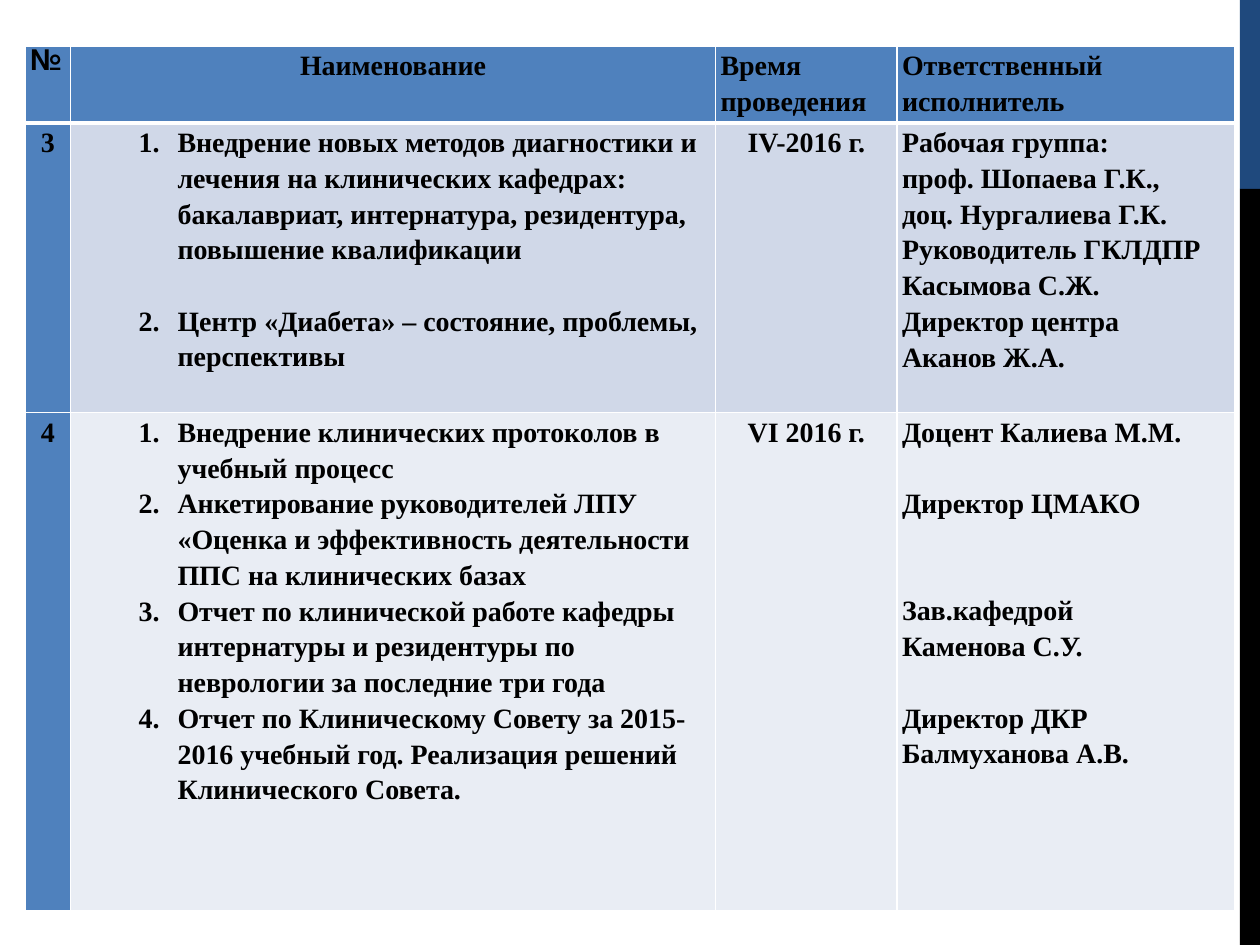
from lxml import etree
from pptx import Presentation
from pptx import util as u
from pptx.dml.color import RGBColor
from pptx.enum import shapes, text
from pptx.oxml import ns

BLACK = RGBColor(0, 0, 0)
NAVY = RGBColor(0x1F, 0x49, 0x7D)
BLUE = RGBColor(0x4F, 0x81, 0xBD)
BAND = RGBColor(0xD0, 0xD8, 0xE8)
PALE = RGBColor(0xE9, 0xED, 0xF4)
WHITE = RGBColor(0xFF, 0xFF, 0xFF)
SERIF, SANS = "Times New Roman", "TeX Gyre Adventor"
MID = text.PP_ALIGN.CENTER
LINE = 20.4

HEAD = ["№", "Наименование", "Время проведения", "Ответственный исполнитель"]
PLANS = [
    ("3",
     ["Внедрение новых методов диагностики и лечения на клинических кафедрах: "
      "бакалавриат, интернатура, резидентура, повышение квалификации",
      ("Центр «Диабета» – состояние, проблемы, перспективы", 1)],
     "IV-2016 г.",
     ["Рабочая группа:", "проф. Шопаева Г.К.,", "доц. Нургалиева Г.К.",
      "Руководитель ГКЛДПР Касымова С.Ж.", "Директор центра", "Аканов Ж.А."]),
    ("4",
     ["Внедрение клинических протоколов в учебный процесс",
      "Анкетирование руководителей ЛПУ «Оценка и эффективность деятельности "
      "ППС на клинических базах",
      "Отчет по клинической работе кафедры интернатуры и резидентуры по "
      "неврологии за последние три года",
      "Отчет по Клиническому Совету за 2015-2016 учебный год. Реализация "
      "решений Клинического Совета."],
     "VI 2016 г.",
     ["Доцент Калиева М.М.", ("Директор ЦМАКО", 1), ("Зав.кафедрой", 2),
      "Каменова С.У.", ("Директор ДКР Балмуханова А.В.", 1)]),
]


def write(frame, lines, font=SERIF, size=16, align=None, listed=False):
    """Fill a frame with paragraphs; a pair gives the text and the lines of space above it."""
    lines = [lines] if isinstance(lines, str) else lines
    for i, line in enumerate(lines):
        words, gap = (line, 0) if isinstance(line, str) else line
        para = frame.paragraphs[0] if i == 0 else frame.add_paragraph()
        para.alignment, para.line_spacing = align, 1.15
        para.space_before = u.Pt(gap * LINE)
        run = para.add_run()
        run.text = words
        run.font.name, run.font.size, run.font.bold = font, u.Pt(size), True
        run.font.color.rgb = BLACK
        if listed:
            props = para._p.get_or_add_pPr()
            props.set("marL", str(u.Inches(0.81)))
            props.set("indent", str(u.Inches(-0.31)))
            etree.SubElement(props, ns.qn("a:buFont"), typeface="+mj-lt")
            etree.SubElement(props, ns.qn("a:buAutoNum"), type="arabicPeriod")


class Deck:
    """Hold the slide and its grid of 100 columns by 75 rows."""

    def __init__(self):
        self.show = Presentation()
        self.show.slide_width, self.show.slide_height = u.Inches(10), u.Inches(7.5)
        self.page = self.show.slides.add_slide(self.show.slide_layouts[6])

    def span(self, *units):
        return [int(self.show.slide_width * n / 100) for n in units]

    def bar(self, *box, fill):
        rect = self.page.shapes.add_shape(shapes.MSO_SHAPE.RECTANGLE, *self.span(*box))
        rect.shadow.inherit = False
        rect.fill.solid()
        rect.fill.fore_color.rgb = fill
        rect.line.fill.background()

    def table(self, left, top, cols, rows):
        box = self.span(left, top, sum(cols), sum(rows))
        grid = self.page.shapes.add_table(len(rows), len(cols), *box).table
        for col, wide in zip(grid.columns, self.span(*cols)):
            col.width = wide
        for row, high in zip(grid.rows, self.span(*rows)):
            row.height = high
        return grid

    def cell(self, cell, lines, fill, edges, **style):
        cell.margin_left = cell.margin_right = u.Inches(0.04)
        cell.margin_top = cell.margin_bottom = 0
        props = cell._tc.get_or_add_tcPr()
        for side, wide in zip("LRTB", edges):
            edge = etree.SubElement(props, ns.qn(f"a:ln{side}"), w=str(u.Pt(wide)))
            paint = etree.SubElement(edge, ns.qn("a:solidFill"))
            etree.SubElement(paint, ns.qn("a:srgbClr"), val=str(WHITE))
        cell.fill.solid()
        cell.fill.fore_color.rgb = fill
        write(cell.text_frame, lines, **style)


def main():
    deck = Deck()
    deck.bar(98.4, 0, 1.6, 15, fill=NAVY)
    deck.bar(98.4, 15, 1.6, 60, fill=BLACK)
    grid = deck.table(2, 3.65, [3.6, 51.2, 14.4, 26.8], [6.1, 23, 39.5])
    looks = [{"font": SANS}, {"align": MID}, {}, {}]
    for c, (name, look) in enumerate(zip(HEAD, looks)):
        deck.cell(grid.cell(0, c), name, BLUE, (1, 1, 1, 3), **look)
    looks = [{"align": MID}, {"listed": True}, {"align": MID}, {}]
    for r, (plan, tint) in enumerate(zip(PLANS, (BAND, PALE)), 1):
        edges = (1, 1, 3 if r == 1 else 1, 1)
        for c, (lines, look) in enumerate(zip(plan, looks)):
            deck.cell(grid.cell(r, c), lines, tint if c else BLUE, edges, **look)
    deck.show.save("out.pptx")


if __name__ == "__main__":
    main()
